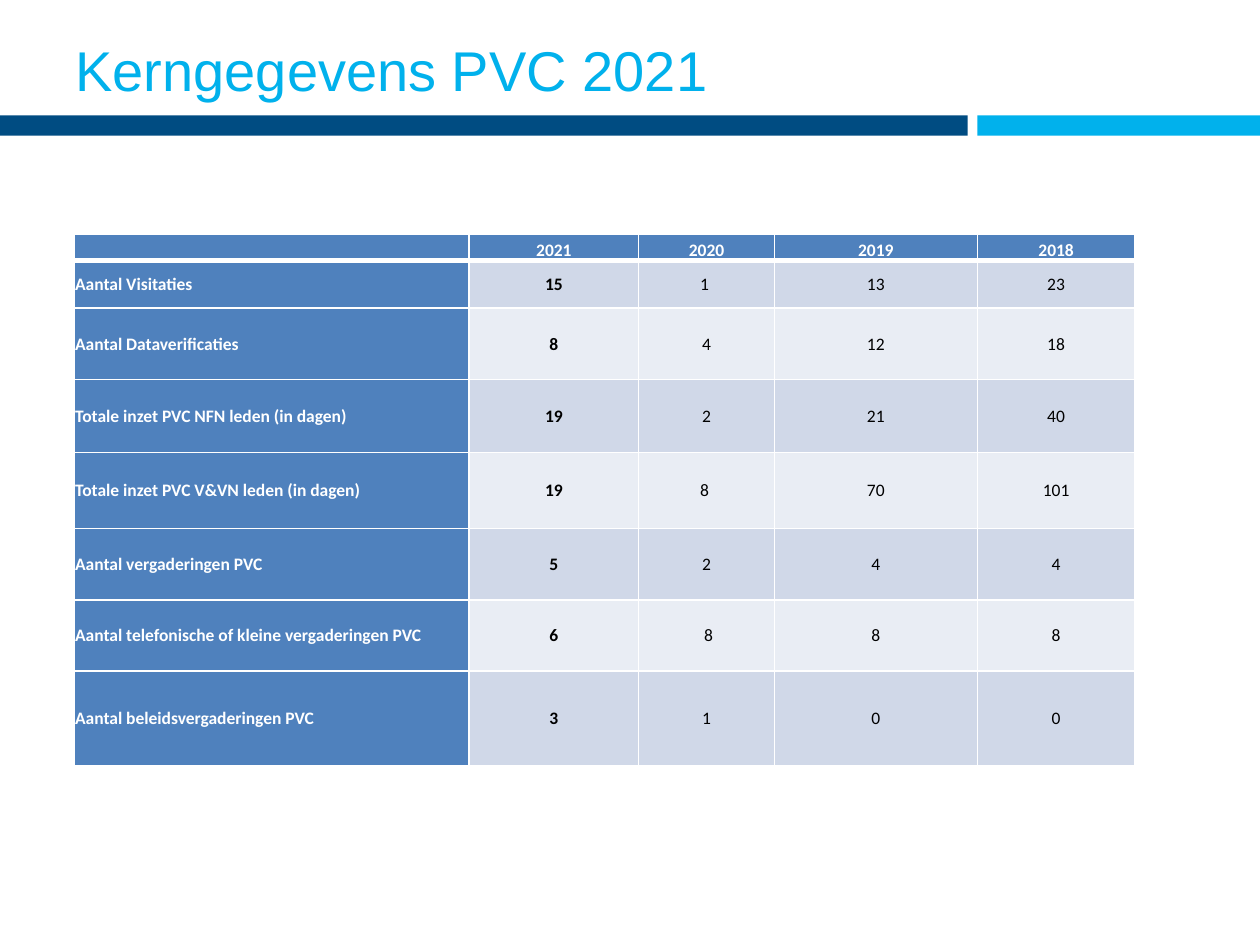
"""Build the slide with the PVC key figures table for 2021."""
from lxml import etree
from pptx import Presentation
from pptx.dml.color import RGBColor
from pptx.enum.shapes import MSO_SHAPE
from pptx.enum.text import MSO_ANCHOR, PP_ALIGN
from pptx.oxml.ns import qn
from pptx.util import Pt

RECTANGLE = MSO_SHAPE.RECTANGLE
MIDDLE, BOTTOM = MSO_ANCHOR.MIDDLE, MSO_ANCHOR.BOTTOM
LEFT, CENTER = PP_ALIGN.LEFT, PP_ALIGN.CENTER

SKY = RGBColor(0x01, 0xB1, 0xEC)
NAVY = RGBColor(0x00, 0x4C, 0x82)
BLUE = RGBColor(0x4F, 0x81, 0xBD)
DARK_BAND = RGBColor(0xD0, 0xD8, 0xE8)
LIGHT_BAND = RGBColor(0xE9, 0xED, 0xF4)
WHITE = RGBColor(0xFF, 0xFF, 0xFF)
BLACK = RGBColor(0x00, 0x00, 0x00)

ROWS = [
    ("", "2021", "2020", "2019", "2018"),
    ("Aantal Visitaties", "15", "1 ", "13", "23"),
    ("Aantal Dataverificaties", "8", "4", "12", "18"),
    ("Totale inzet PVC NFN leden (in dagen)", "19", "2", "21", "40"),
    ("Totale inzet PVC V&VN leden (in dagen)", "19", "8 ", "70", "101"),
    ("Aantal vergaderingen PVC", "5", "2", "4", "4"),
    ("Aantal telefonische of kleine vergaderingen PVC", "6", " 8", "8", "8"),
    ("Aantal beleidsvergaderingen PVC", "3", "1", "0", "0"),
]
COLUMN_WIDTHS = [225.5, 97, 77.5, 116, 90]
ROW_HEIGHTS = [15, 27, 41, 41.5, 43.5, 41, 40.5, 54]


def add_run(para, text, font_name, size, color, bold=False):
    span = para.add_run()
    span.text = text
    span.font.name = font_name
    span.font.size = Pt(size)
    span.font.bold = bold
    span.font.color.rgb = color


def set_borders(cell, widths):
    properties = cell._tc.get_or_add_tcPr()
    for position, (side, width) in enumerate(widths.items()):
        line = etree.Element(qn(f"a:ln{side}"), w=str(Pt(width)))
        fill = etree.SubElement(line, qn("a:solidFill"))
        etree.SubElement(fill, qn("a:srgbClr"), val=str(WHITE))
        properties.insert(position, line)


deck = Presentation()
deck.slide_width, deck.slide_height = Pt(720), Pt(540)
page = deck.slides.add_slide(deck.slide_layouts[6])

for left, width, color in [(558.5, 161.5, SKY), (0, 553, NAVY)]:
    bar = page.shapes.add_shape(RECTANGLE, Pt(left), Pt(66), Pt(width), Pt(11.5))
    bar.shadow.inherit = False
    bar.fill.solid()
    bar.fill.fore_color.rgb = color
    bar.line.fill.background()

title_box = page.shapes.add_textbox(Pt(36), Pt(15), Pt(517), Pt(44))
title_frame = title_box.text_frame
title_frame.word_wrap = True
title_frame.vertical_anchor = BOTTOM
title_frame.margin_bottom = 0
add_run(title_frame.paragraphs[0], "Kerngegevens PVC 2021", "Arial", 32, SKY)

table = page.shapes.add_table(
    len(ROWS), len(COLUMN_WIDTHS), Pt(42.5), Pt(134),
    Pt(sum(COLUMN_WIDTHS)), Pt(sum(ROW_HEIGHTS)),
).table
table.horz_banding = False
for column, width in zip(table.columns, COLUMN_WIDTHS):
    column.width = Pt(width)

for row_index, (values, height) in enumerate(zip(ROWS, ROW_HEIGHTS)):
    table.rows[row_index].height = Pt(height)
    is_header = row_index == 0
    band = DARK_BAND if row_index % 2 else LIGHT_BAND
    for column_index, value in enumerate(values):
        is_heading = is_header or column_index == 0
        cell = table.cell(row_index, column_index)
        cell.fill.solid()
        cell.fill.fore_color.rgb = BLUE if is_heading else band
        cell.vertical_anchor = BOTTOM if is_header else MIDDLE
        cell.margin_left = cell.margin_right = cell.margin_top = Pt(0.5)
        cell.margin_bottom = 0
        set_borders(cell, {
            "L": 1, "R": 1,
            "T": 3 if row_index == 1 else 1,
            "B": 3 if is_header else 1,
        })
        para = cell.text_frame.paragraphs[0]
        para.alignment = CENTER if column_index else LEFT
        if value:
            add_run(para, value, "Calibri", 10, WHITE if is_heading else BLACK,
                    is_heading or column_index == 1)
        else:
            etree.SubElement(para._p, qn("a:endParaRPr"), sz="1000")

deck.save("out.pptx")
